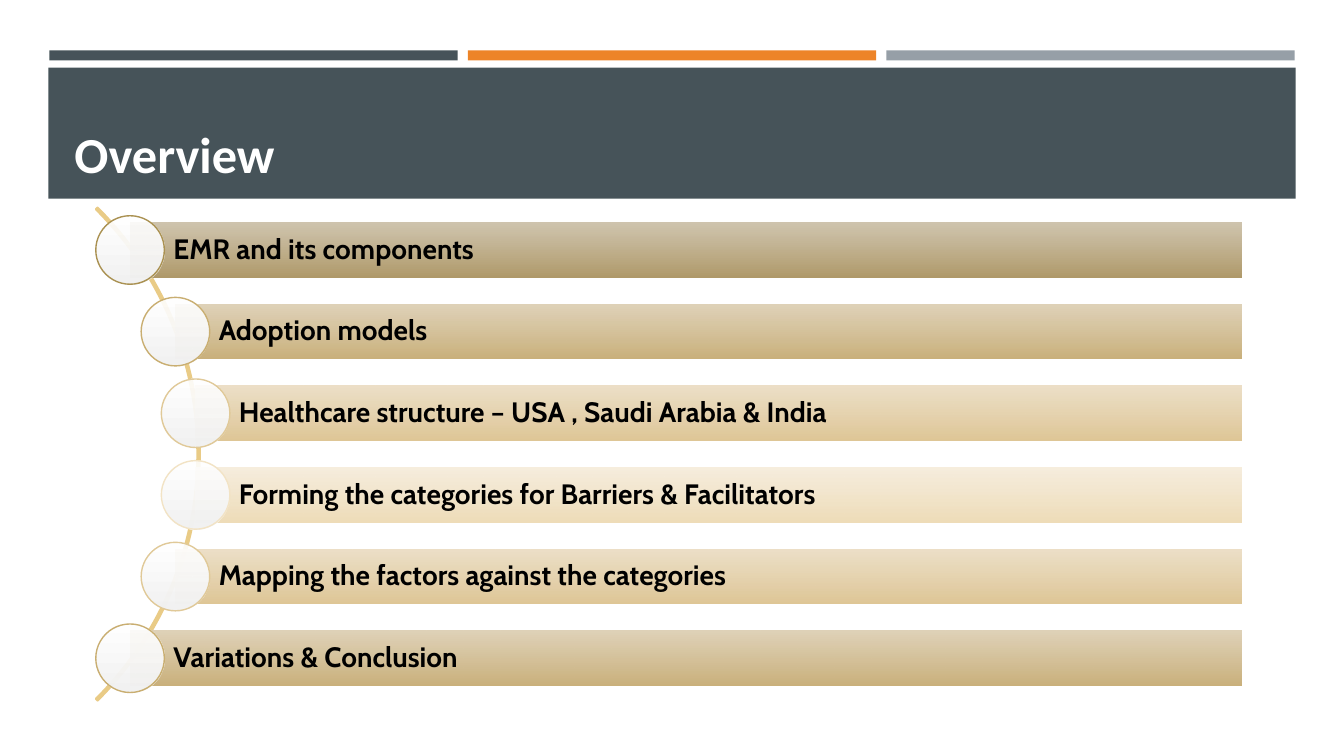
from lxml import etree
from pptx import Presentation
from pptx.dml.color import RGBColor
from pptx.enum.shapes import MSO_SHAPE
from pptx.enum.text import MSO_ANCHOR, PP_ALIGN
from pptx.oxml.ns import qn
from pptx.util import Inches, Pt

RECTANGLE, OVAL, ARC = MSO_SHAPE.RECTANGLE, MSO_SHAPE.OVAL, MSO_SHAPE.BLOCK_ARC
MIDDLE, BOTTOM = MSO_ANCHOR.MIDDLE, MSO_ANCHOR.BOTTOM
LEFT = PP_ALIGN.LEFT

COLORS = {
    "slate": "465359", "orange": "ED8428", "gray": "969FA7",
    "white": "FFFFFF", "black": "000000", "arc": "E9CB86",
    "circle_top": "FFFFFF", "circle_bottom": "F2F2F2",
}
# Each tone: bar top, bar bottom, circle outline
TONES = {
    "dark": ("CABEA5", "B09A6A", "AA9151"),
    "tan": ("DCCDB0", "CAB17C", "C9AE71"),
    "sand": ("EBDCC1", "DFC797", "E0C998"),
    "cream": ("F6ECDA", "EFDDB9", "F2E3C5"),
}
# Each topic: text, left edge of the bar, tone
TOPICS = [
    ("EMR and its components", 1.29, "dark"),
    ("Adoption models", 1.74, "tan"),
    ("Healthcare structure – USA , Saudi Arabia & India", 1.94, "sand"),
    ("Forming the categories for Barriers & Facilitators", 1.94, "cream"),
    ("Mapping the factors against the categories", 1.74, "sand"),
    ("Variations & Conclusion", 1.29, "tan"),
]
FIRST_TOP, PITCH, BAR_HEIGHT, BAR_RIGHT = 2.21, 0.81, 0.54, 12.31
CIRCLE = 0.68


class SlideBuilder:
    title_font = "Calibri"
    topic_font = "Cabin"

    def __init__(self, slide):
        self.slide = slide

    def shape(self, kind, left, top, width, height, fill=None, line=None, weight=1):
        """Add a shape; fill is None, one color, or a (top, bottom) gradient."""
        shape = self.slide.shapes.add_shape(
            kind, Inches(left), Inches(top), Inches(width), Inches(height))
        shape.shadow.inherit = False
        if fill is None:
            shape.fill.background()
        elif isinstance(fill, tuple):
            self.gradient(shape, fill)
        else:
            shape.fill.solid()
            shape.fill.fore_color.rgb = RGBColor.from_string(fill)
        if line:
            shape.line.color.rgb = RGBColor.from_string(line)
            shape.line.width = Pt(weight)
        else:
            shape.line.fill.background()
        return shape

    def gradient(self, shape, colors):
        shape.fill.gradient()
        shape.fill.gradient_angle = 270
        for stop, color, position in zip(shape.fill.gradient_stops, colors, (0, 1)):
            stop.color.rgb = RGBColor.from_string(color)
            stop.position = position
        # The upper stop is slightly transparent
        upper = shape._element.spPr.find(".//" + qn("a:srgbClr"))
        etree.SubElement(upper, qn("a:alpha")).set("val", "90000")

    def text(self, box, words, font, size, color, anchor, insets):
        frame = box.text_frame
        frame.word_wrap = True
        frame.vertical_anchor = anchor
        (frame.margin_left, frame.margin_top,
         frame.margin_right, frame.margin_bottom) = map(Inches, insets)
        para = frame.paragraphs[0]
        para.text = words
        para.alignment = LEFT
        para.line_spacing = 0.9
        para.font.name = font
        para.font.size = Pt(size)
        para.font.bold = True
        para.font.color.rgb = RGBColor.from_string(color)

    def title(self, words):
        box = self.slide.shapes.add_textbox(
            Inches(0.64), Inches(0.77), Inches(12.06), Inches(1.11))
        self.text(box, words, self.title_font, 36, COLORS["white"], BOTTOM,
                  (0.1, 0.05, 0.1, 0.05))

    def arc(self):
        arc = self.shape(ARC, -4.93, 1.05, 6.91, 6.91, line=COLORS["arc"], weight=1.75)
        # Start and end angles (315 and 45 degrees), then thickness
        for index, value in enumerate((189, 27, 0.003)):
            arc.adjustments[index] = value

    def topic(self, words, left, top, tone):
        bar_top, bar_bottom, outline = TONES[tone]
        bar = self.shape(RECTANGLE, left, top, BAR_RIGHT - left, BAR_HEIGHT,
                         (bar_top, bar_bottom))
        self.text(bar, words, self.topic_font, 20, COLORS["black"], MIDDLE,
                  (0.43, 0.06, 0.06, 0.06))
        # The circle is centered on the left edge of its bar
        self.shape(OVAL, left - CIRCLE / 2, top + (BAR_HEIGHT - CIRCLE) / 2,
                   CIRCLE, CIRCLE,
                   (COLORS["circle_top"], COLORS["circle_bottom"]), outline)


def main():
    deck = Presentation()
    deck.slide_width, deck.slide_height = Inches(13.33), Inches(7.5)
    page = SlideBuilder(deck.slides.add_slide(deck.slide_layouts[6]))

    # Header strips and title band
    for index, name in enumerate(("slate", "orange", "gray")):
        page.shape(RECTANGLE, 0.49 + index * 4.15, 0.5, 4.05, 0.1, COLORS[name])
    page.shape(RECTANGLE, 0.48, 0.67, 12.37, 1.3, COLORS["slate"])
    page.title("Overview")

    # Topics along the arc
    page.arc()
    for index, (words, left, tone) in enumerate(TOPICS):
        page.topic(words, left, FIRST_TOP + index * PITCH, tone)

    deck.save("out.pptx")


if __name__ == "__main__":
    main()
